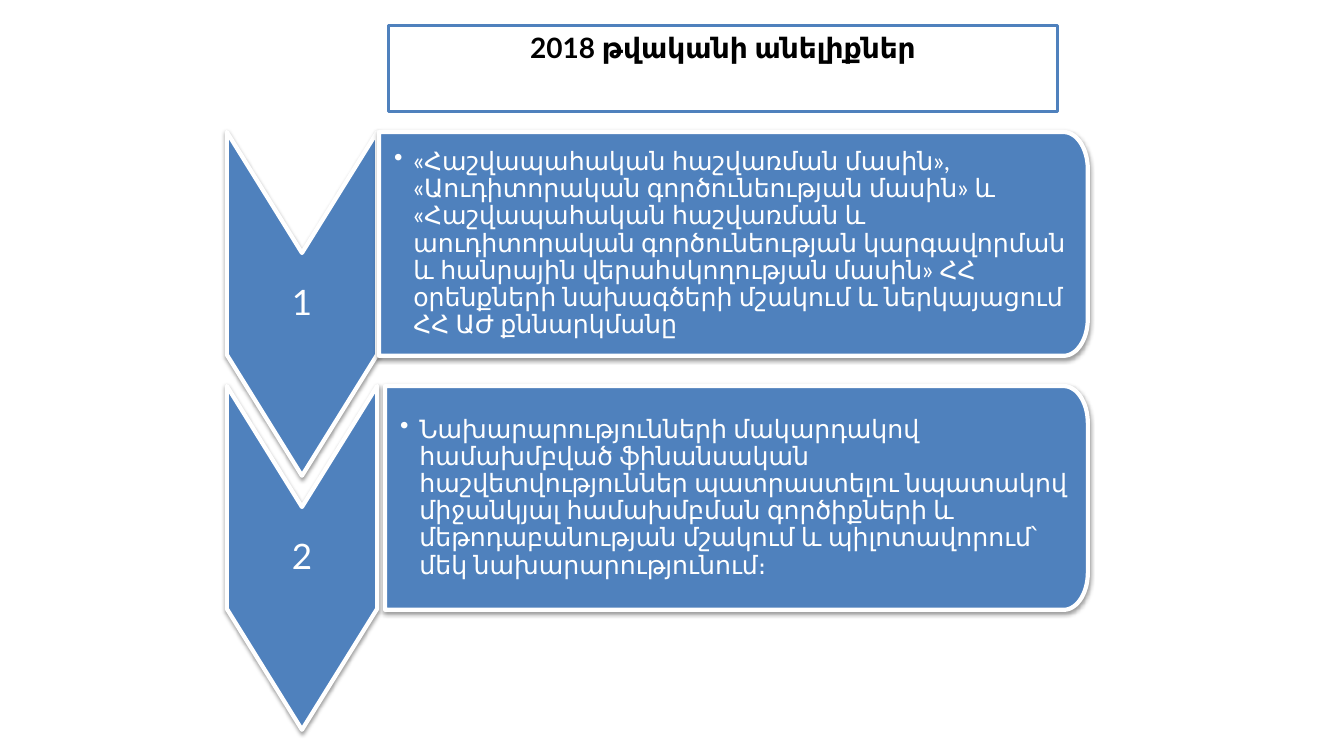
import math
from lxml import etree
from pptx import Presentation
from pptx import util as u
from pptx.dml import color
from pptx.enum import shapes, text
from pptx.oxml import ns

COLORS = {"blue": "4F81BD", "white": "FFFFFF", "black": "000000"}
FONT = "Lato"
ROW_TOP, ROW_STEP = 1.31, 2.52
STEPS = [
    ("1", 3.76, "«Հաշվապահական հաշվառման մասին», «Աուդիտորական գործունեության մասին» և "
     "«Հաշվապահական հաշվառման և աուդիտորական գործունեության կարգավորման և հանրային "
     "վերահսկողության մասին» ՀՀ օրենքների նախագծերի մշակում և ներկայացում ՀՀ ԱԺ քննարկմանը"),
    ("2", 3.82, "Նախարարությունների մակարդակով համախմբված ֆինանսական հաշվետվություններ "
     "պատրաստելու նպատակով միջանկյալ համախմբման գործիքների և մեթոդաբանության մշակում և "
     "պիլոտավորում՝ մեկ նախարարությունում։"),
]


def rgb(name):
    return color.RGBColor.from_string(COLORS[name])


def paint(shape, fill, line, width):
    shape.fill.solid()
    shape.fill.fore_color.rgb = rgb(fill)
    shape.line.color.rgb = rgb(line)
    shape.line.width = u.Pt(width)
    shape.shadow.inherit = False


def write(shape, words, size, ink, align, anchor, insets, bold=False):
    frame = shape.text_frame
    frame.text = words
    frame.word_wrap = True
    frame.vertical_anchor = anchor
    (frame.margin_left, frame.margin_top,
     frame.margin_right, frame.margin_bottom) = map(u.Inches, insets)
    paragraph = frame.paragraphs[0]
    paragraph.alignment = align
    font = paragraph.runs[0].font
    font.name, font.size, font.bold = FONT, u.Pt(size), bold
    font.color.rgb = rgb(ink)
    return paragraph


def add_outline(slide, points):
    """Blue outline with a white edge and a soft shadow below."""
    corners = [(u.Inches(x), u.Inches(y)) for x, y in points]
    builder = slide.shapes.build_freeform(*corners[0])
    builder.add_line_segments(corners[1:], close=True)
    outline = builder.convert_to_shape()
    paint(outline, "blue", "white", 3)
    effects = outline.element.spPr.find(ns.qn("a:effectLst"))
    shadow = etree.SubElement(effects, ns.qn("a:outerShdw"), blurRad=str(u.Pt(3.1)),
                              dist=str(u.Pt(1.6)), dir="5400000", rotWithShape="0")
    tint = etree.SubElement(shadow, ns.qn("a:srgbClr"), val=COLORS["black"])
    etree.SubElement(tint, ns.qn("a:alpha"), val="38000")
    return outline


def add_title(slide, left, top, width, height):
    title = slide.shapes.add_shape(shapes.MSO_SHAPE.RECTANGLE, *map(
        u.Inches, (left, top, width, height)))
    paint(title, "white", "blue", 2)
    write(title, "2018 թվականի անելիքներ", 20, "black", text.PP_ALIGN.CENTER,
          text.MSO_ANCHOR.TOP, (0.1, 0.05, 0.1, 0.05), bold=True)


def add_chevron(slide, number, left, top, width, height, notch=1.2):
    middle, right, bottom = left + width / 2, left + width, top + height
    chevron = add_outline(slide, [
        (right, top), (right, bottom - notch), (middle, bottom),
        (left, bottom - notch), (left, top), (middle, top + notch)])
    paragraph = write(chevron, number, 25, "white", text.PP_ALIGN.CENTER,
                      text.MSO_ANCHOR.MIDDLE, (0.02, 0.74, 0.02, 0.74))
    paragraph.line_spacing = 0.9


def add_panel(slide, words, left, top, width, height, round_x=0.24, round_y=0.37):
    right, bottom = left + width, top + height
    # Quarter ellipse, from the straight edge round to the right side
    arc = [(round_x * (1 - math.sin(a)), round_y * (1 - math.cos(a)))
           for a in (math.radians(6 * i) for i in range(16))]
    upper = [(right - x, top + y) for x, y in arc]
    lower = [(right - x, bottom - y) for x, y in reversed(arc)]
    panel = add_outline(slide, [(left, top)] + upper + lower + [(left, bottom)])
    paragraph = write(panel, words, 18, "white", text.PP_ALIGN.LEFT,
                      text.MSO_ANCHOR.MIDDLE, (0.15, 0.08, 0.18, 0.08))
    paragraph.level = 1
    paragraph.line_spacing = 0.9
    properties = paragraph._p.get_or_add_pPr()
    properties.set("marL", str(u.Inches(0.19)))
    properties.set("indent", str(u.Inches(-0.19)))
    etree.SubElement(properties, ns.qn("a:buChar"), char="•")


def main():
    deck = Presentation()
    deck.slide_width, deck.slide_height = u.Inches(13.33), u.Inches(7.5)
    slide = deck.slides.add_slide(deck.slide_layouts[6])

    # Title
    add_title(slide, 3.85, 0.25, 6.64, 0.86)

    # Steps, last first so that each chevron overlaps the next
    for row, (number, panel_left, words) in reversed(list(enumerate(STEPS))):
        top = ROW_TOP + row * ROW_STEP
        add_chevron(slide, number, 2.25, top, 1.49, 3.41)
        add_panel(slide, words, panel_left, top, 10.79 - panel_left, 2.22)

    deck.save("out.pptx")


if __name__ == "__main__":
    main()
